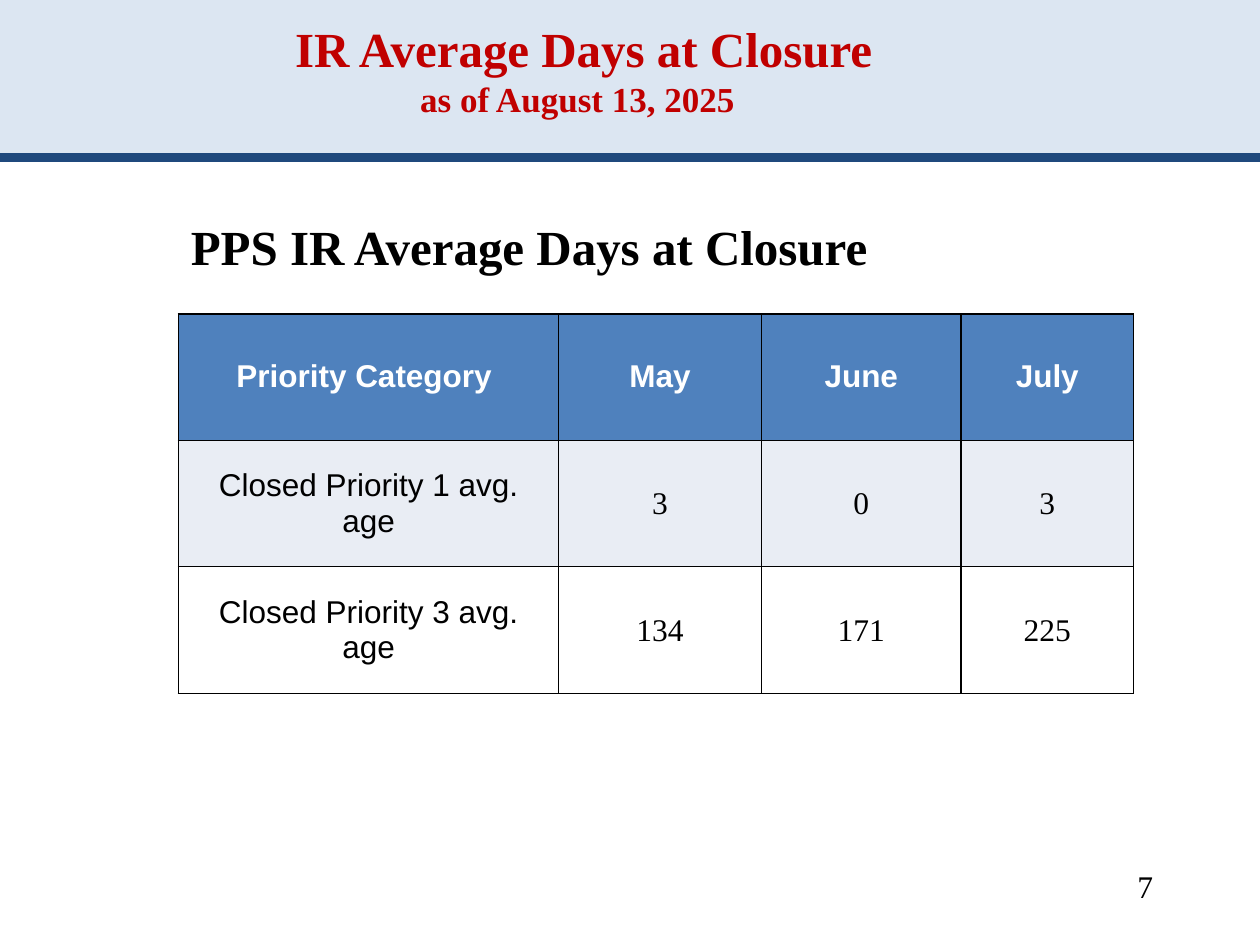
from lxml import etree
from pptx import Presentation
from pptx.dml.color import RGBColor
from pptx.enum.shapes import MSO_CONNECTOR, MSO_SHAPE
from pptx.enum.text import MSO_ANCHOR, MSO_AUTO_SIZE, PP_ALIGN
from pptx.oxml.ns import qn
from pptx.util import Pt

LEFT, CENTER, RIGHT = PP_ALIGN.LEFT, PP_ALIGN.CENTER, PP_ALIGN.RIGHT
MIDDLE, BOTTOM = MSO_ANCHOR.MIDDLE, MSO_ANCHOR.BOTTOM
SERIF, SANS = "Times New Roman", "Arial"
COLORS = {
    "band": "DCE6F2", "rule": "1F497D", "title": "C00000", "text": "000000",
    "header": "4F81BD", "header_text": "FFFFFF", "shaded": "E9EDF4", "plain": "FFFFFF",
}

# Content
TITLE_LINES = [(" IR Average Days at Closure", 28), ("as of August 13, 2025", 20)]
HEADING = "PPS IR Average Days at Closure"
PAGE_NUMBER = "7"
TABLE_ROWS = [
    ("Priority Category ", "May", "June", "July"),
    ("Closed Priority 1 avg. age", "3", "0", "3"),
    ("Closed Priority 3 avg. age", "134", "171", "225"),
]
ROW_FILLS = ["header", "shaded", "plain"]
COLUMN_WIDTHS = [217.2, 116, 114, 98.6]
ROW_HEIGHT = 72.3
SLIDE_WIDTH, SLIDE_HEIGHT = 720, 540
CONTENT_LEFT = 102


def rgb(name):
    return RGBColor.from_string(COLORS[name])


def format_font(font, size, name=SERIF, color="text", bold=False):
    font.size, font.name, font.bold = Pt(size), name, bold
    font.color.rgb = rgb(color)


def add_text(slide, text, left, top, width, height, size, align=LEFT, bold=False):
    frame = slide.shapes.add_textbox(Pt(left), Pt(top), Pt(width), Pt(height)).text_frame
    frame.word_wrap = True
    frame.text = text
    paragraph = frame.paragraphs[0]
    paragraph.alignment = align
    format_font(paragraph.font, size, bold=bold)


def add_borders(cell):
    properties = cell._tc.get_or_add_tcPr()
    for index, side in enumerate(("lnL", "lnR", "lnT", "lnB")):
        line = etree.Element(qn(f"a:{side}"), w=str(Pt(1)))
        fill = etree.SubElement(line, qn("a:solidFill"))
        etree.SubElement(fill, qn("a:srgbClr"), val=COLORS["text"])
        properties.insert(index, line)


presentation = Presentation()
presentation.slide_width, presentation.slide_height = Pt(SLIDE_WIDTH), Pt(SLIDE_HEIGHT)
slide = presentation.slides.add_slide(presentation.slide_layouts[5])
title = slide.shapes.title

# Header band and rule
band = slide.shapes.add_shape(MSO_SHAPE.RECTANGLE, 0, 0, Pt(SLIDE_WIDTH), Pt(92))
band.shadow.inherit = False
band.fill.solid()
band.fill.fore_color.rgb = rgb("band")
band.line.fill.background()
rule = slide.shapes.add_connector(MSO_CONNECTOR.STRAIGHT, 0, Pt(90), Pt(SLIDE_WIDTH), Pt(90))
rule.line.color.rgb = rgb("rule")
rule.line.width = Pt(5.5)
etree.SubElement(rule._element.spPr, qn("a:effectLst"))

# Title, brought in front of the band
slide.shapes._spTree.append(title._element)
title.left, title.top, title.width, title.height = Pt(12), Pt(21.6), Pt(636), Pt(50.4)
title_frame = title.text_frame
title_frame.auto_size = MSO_AUTO_SIZE.NONE
title_frame.vertical_anchor = BOTTOM
title_paragraph = title_frame.paragraphs[0]
title_paragraph.alignment = CENTER
for index, (text, size) in enumerate(TITLE_LINES):
    if index:
        title_paragraph.add_line_break()
    run = title_paragraph.add_run()
    run.text = text
    format_font(run.font, size, color="title", bold=True)

# Heading
add_text(slide, HEADING, CONTENT_LEFT, 120, 564, 41, 28, bold=True)

# Table
table = slide.shapes.add_table(
    len(TABLE_ROWS), len(COLUMN_WIDTHS), Pt(CONTENT_LEFT), Pt(179.3),
    Pt(sum(COLUMN_WIDTHS)), Pt(ROW_HEIGHT * len(TABLE_ROWS))).table
for column, width in zip(table.columns, COLUMN_WIDTHS):
    column.width = Pt(width)
for row_index, (values, fill) in enumerate(zip(TABLE_ROWS, ROW_FILLS)):
    table.rows[row_index].height = Pt(ROW_HEIGHT)
    is_header = row_index == 0
    for column_index, value in enumerate(values):
        cell = table.cell(row_index, column_index)
        is_number = not is_header and column_index > 0
        cell.text = value
        cell.vertical_anchor = MIDDLE
        cell.fill.solid()
        cell.fill.fore_color.rgb = rgb(fill)
        if is_number:
            cell.margin_left = cell.margin_right = cell.margin_top = Pt(0.7)
            cell.margin_bottom = 0
        paragraph = cell.text_frame.paragraphs[0]
        paragraph.alignment = CENTER
        format_font(paragraph.font, 18, SERIF if is_number else SANS,
                    "header_text" if is_header else "text", is_header)
        add_borders(cell)

# Page number
add_text(slide, PAGE_NUMBER, 516, 492, 150, 36, 18, align=RIGHT)

presentation.save("out.pptx")
